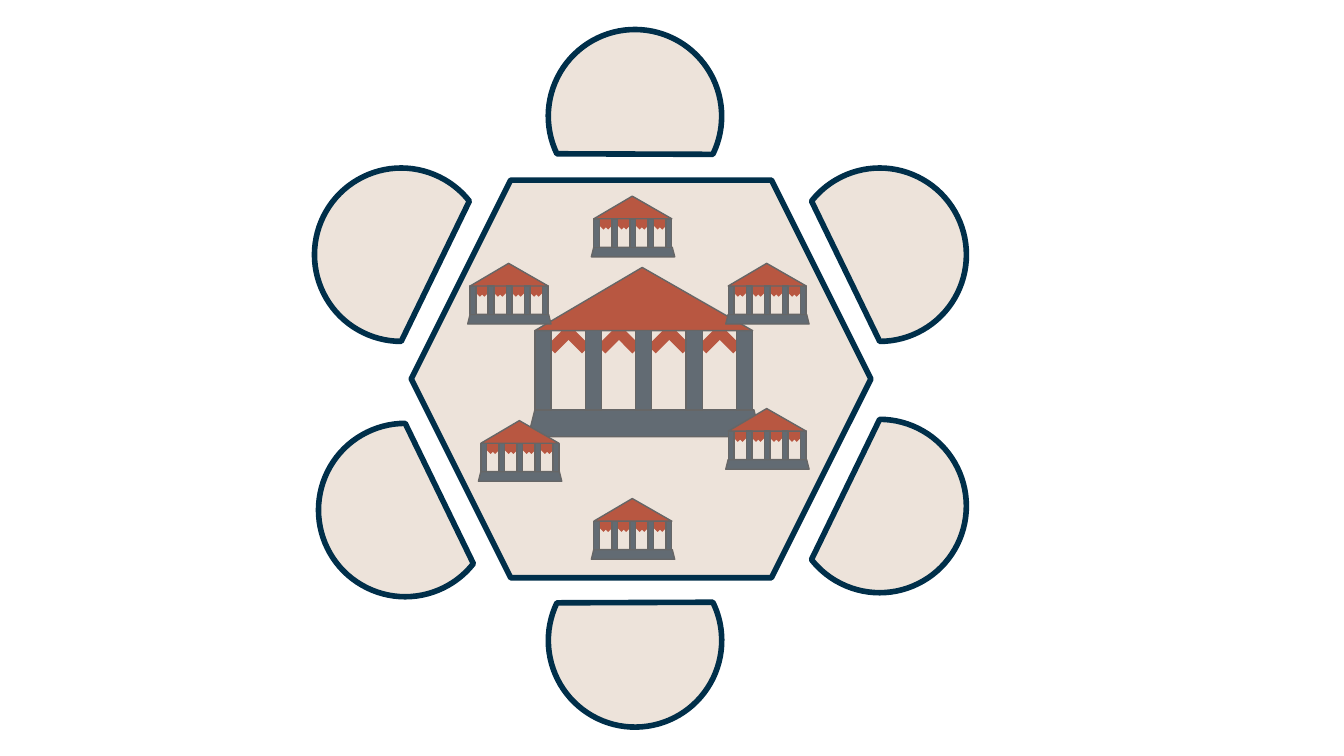
from dataclasses import dataclass

from lxml.etree import SubElement
from pptx import Presentation
from pptx.dml.color import RGBColor as RGB
from pptx.enum.shapes import MSO_CONNECTOR as Link, MSO_SHAPE as Form
from pptx.oxml.ns import qn
from pptx.util import Inches, Pt


@dataclass(frozen=True)
class Theme:
    sand: str = "EDE3DA"
    navy: str = "002F4A"
    stone: str = "626B73"
    brick: str = "B85741"
    edge: str = "666666"
    bold: float = 3
    thin: float = 0.75
    trim: float = 6


@dataclass
class Board:
    theme: Theme
    slide: object

    def group(self):
        return self.slide.shapes.add_group_shape().shapes

    def stroke(self, line, color, width):
        line.fill.solid()
        line.fill.fore_color.rgb = RGB.from_string(color)
        line.width = Pt(width)

    def shape(self, group, form, box, fill, line, adj=(), flip=False, **form_at):
        item = group.add_shape(form, *map(Inches, box))
        item.shadow.inherit = False
        item.fill.solid()
        item.fill.fore_color.rgb = RGB.from_string(fill)
        self.stroke(item.line, *line)
        for i, value in enumerate(adj):
            item.adjustments[i] = value
        for name, value in form_at.items():
            setattr(item, name, value)
        if flip:
            item.element.spPr.xfrm.set("flipH", "1")

    def line(self, group, start, end):
        item = group.add_connector(Link.STRAIGHT, *map(Inches, start + end))
        self.stroke(item.line, self.theme.brick, self.theme.trim)
        SubElement(item.element.spPr, qn("a:effectLst"))

    def table(self, box, seats, size):
        t = self.theme
        look = {"fill": t.sand, "line": (t.navy, t.bold)}
        group = self.group()
        self.shape(group, Form.HEXAGON, box, adj=[0.25], **look)
        for x, y, turn, flip in seats:
            self.shape(group, Form.CHORD, (x, y, size, size), adj=[22.9, 162],
                       flip=flip, rotation=turn, **look)

    def hall(self, left, top, scale):
        t = self.theme
        group = self.group()
        pitch, post, eave = 0.375, 0.12, 0.47

        def at(x, y):
            return left + x * scale, top + y * scale

        def part(form, x, y, w, h, fill=t.stone, adj=()):
            box = at(x, y) + (w * scale, h * scale)
            self.shape(group, form, box, fill, (t.edge, t.thin), adj)

        def posts(*places):
            for i in places:
                part(Form.RECTANGLE, 0.05 + i * pitch, eave, post, 0.59)

        # Awnings: two slanted strokes in each bay
        for bay in (3, 2, 1, 0):
            x = 0.17 + bay * pitch
            for foot, peak in ((0, 0.14), (0.26, 0.12)):
                self.line(group, at(x + foot, 0.61), at(x + peak, eave))

        # Base, posts and roof
        part(Form.TRAPEZOID, 0, 1.06, 1.73, 0.2, adj=[0.25])
        posts(0, 4)
        part(Form.ISOSCELES_TRIANGLE, 0.05, 0, 1.62, eave, t.brick, [0.493])
        posts(2, 1, 3)


# Left, top, rotation, mirrored
SEATS = [
    (2.37, 3.15, 0, False),
    (5.9, 3.12, 0, True),
    (2.34, 1.25, 180, True),
    (5.9, 1.25, 180, False),
    (4.08, 4.12, 295.7, False),
    (4.08, 0.22, 244.3, True),
]

# Left and top of the small halls
HALLS = [(3.56, 3.13), (4.4, 1.46), (5.4, 1.96),
         (5.4, 3.04), (4.4, 3.71), (3.48, 1.96)]


def main():
    # Widescreen page, 16:9
    deck = Presentation()
    page = {"slide_width": 10, "slide_height": 10 * 9 / 16}
    for name, value in page.items():
        setattr(deck, name, Inches(value))
    board = Board(Theme(), deck.slides.add_slide(deck.slide_layouts[6]))

    # Table with six seats
    board.table((3.06, 1.34, 3.42, 2.96), SEATS, 1.29)

    # Large hall in the middle, a small one before each seat
    board.hall(3.93, 1.99, 1)
    for left, top in HALLS:
        board.hall(left, top, 0.62 / 1.73)

    deck.save("out.pptx")


if __name__ == "__main__":
    main()
